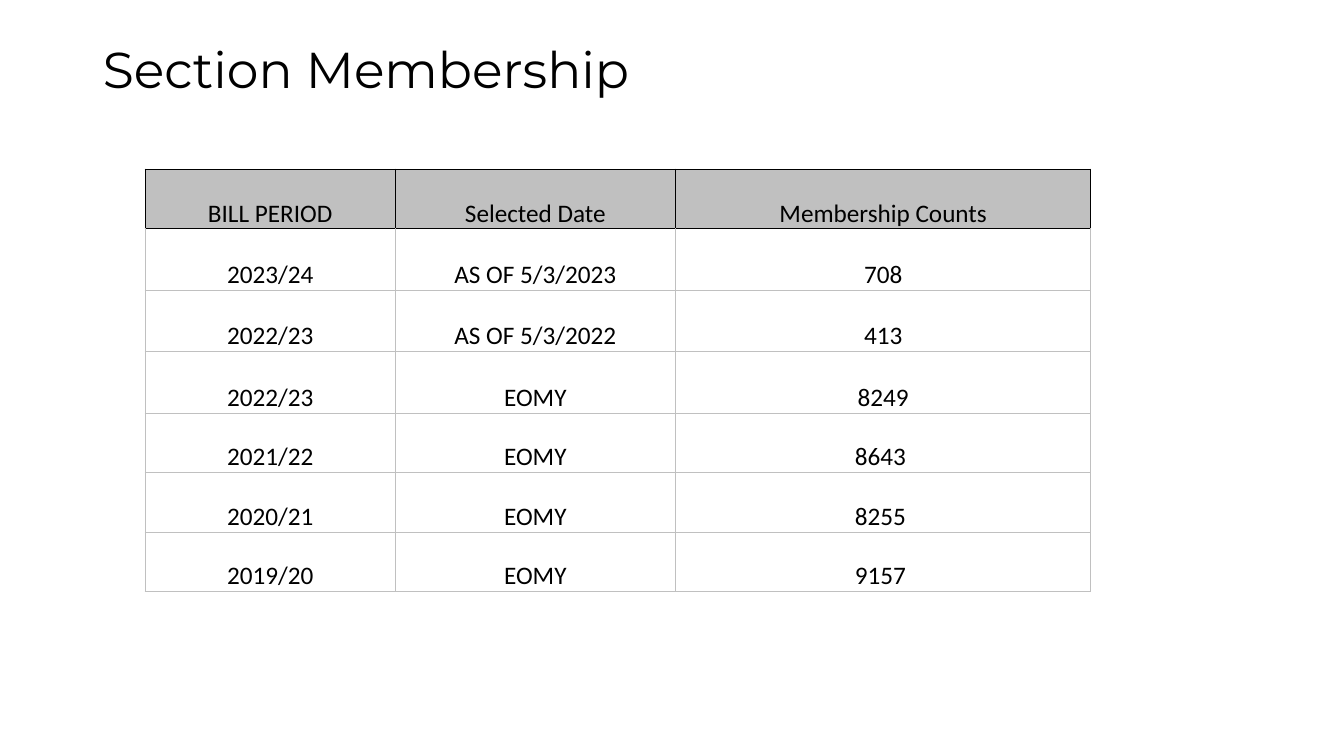
from lxml import etree
from pptx import Presentation
from pptx.dml.color import RGBColor
from pptx.enum.text import MSO_ANCHOR, MSO_AUTO_SIZE, PP_ALIGN
from pptx.oxml.ns import qn
from pptx.util import Inches, Pt

TOP, BOTTOM = MSO_ANCHOR.TOP, MSO_ANCHOR.BOTTOM
LEFT, CENTER = PP_ALIGN.LEFT, PP_ALIGN.CENTER
NO_AUTOFIT = MSO_AUTO_SIZE.NONE
TITLE_ONLY = 5

THEME = {
    "ink": "000000", "grey": "C0C0C0", "paper": "FFFFFF",
    "title_font": "Montserrat", "title_size": 36,
    "cell_font": "Calibri", "cell_size": 18, "border": 1,
}

ROWS = [
    ("BILL PERIOD", "Selected Date", "Membership Counts"),
    ("2023/24", "AS OF 5/3/2023", "708"),
    ("2022/23", "AS OF 5/3/2022", "413"),
    ("2022/23", "EOMY", "8249"),
    ("2021/22", "EOMY", "8643 "),
    ("2020/21", "EOMY", "8255 "),
    ("2019/20", "EOMY", "9157 "),
]
COL_WIDTHS = [2.48, 2.78, 4.12]
ROW_HEIGHTS = [0.59] + [0.61] * 3 + [0.59] * 3


def style_text(p, font, size, align):
    p.alignment = align
    for r in p.runs:
        r.font.name = font
        r.font.size = Pt(size)
        r.font.bold = False
        r.font.color.rgb = RGBColor.from_string(THEME["ink"])


def add_border(cell, side, color):
    tc_pr = cell._tc.get_or_add_tcPr()
    ln = etree.SubElement(tc_pr, qn(f"a:ln{side}"), w=str(Pt(THEME["border"])))
    fill = etree.SubElement(ln, qn("a:solidFill"))
    etree.SubElement(fill, qn("a:srgbClr"), val=color)


prs = Presentation()
prs.slide_width, prs.slide_height = Inches(13.33), Inches(7.5)
s = prs.slides.add_slide(prs.slide_layouts[TITLE_ONLY])

title = s.shapes.title
title.left, title.top = Inches(0.92), Inches(0.4)
title.width, title.height = Inches(11.5), Inches(0.96)
tf = title.text_frame
tf.text = "Section Membership"
tf.auto_size = NO_AUTOFIT
tf.vertical_anchor = TOP
p = tf.paragraphs[0]
p.line_spacing = 0.9
style_text(p, THEME["title_font"], THEME["title_size"], LEFT)

table = s.shapes.add_table(
    len(ROWS), len(COL_WIDTHS), Inches(1.44), Inches(1.68),
    Inches(sum(COL_WIDTHS)), Inches(sum(ROW_HEIGHTS)),
).table
table.horz_banding = False
for column, width in zip(table.columns, COL_WIDTHS):
    column.width = Inches(width)

for i, (values, height) in enumerate(zip(ROWS, ROW_HEIGHTS)):
    table.rows[i].height = Inches(height)
    for j, value in enumerate(values):
        cell = table.cell(i, j)
        cell.text = value
        cell.vertical_anchor = BOTTOM
        cell.margin_left = cell.margin_right = Inches(0.07)
        cell.margin_top = cell.margin_bottom = 0
        style_text(cell.text_frame.paragraphs[0],
                   THEME["cell_font"], THEME["cell_size"], CENTER)
        for side in "LRTB":
            dark = i == 0 or (i == 1 and side == "T")
            add_border(cell, side, THEME["ink" if dark else "grey"])
        cell.fill.solid()
        cell.fill.fore_color.rgb = RGBColor.from_string(
            THEME["grey" if i == 0 else "paper"])

prs.save("out.pptx")
